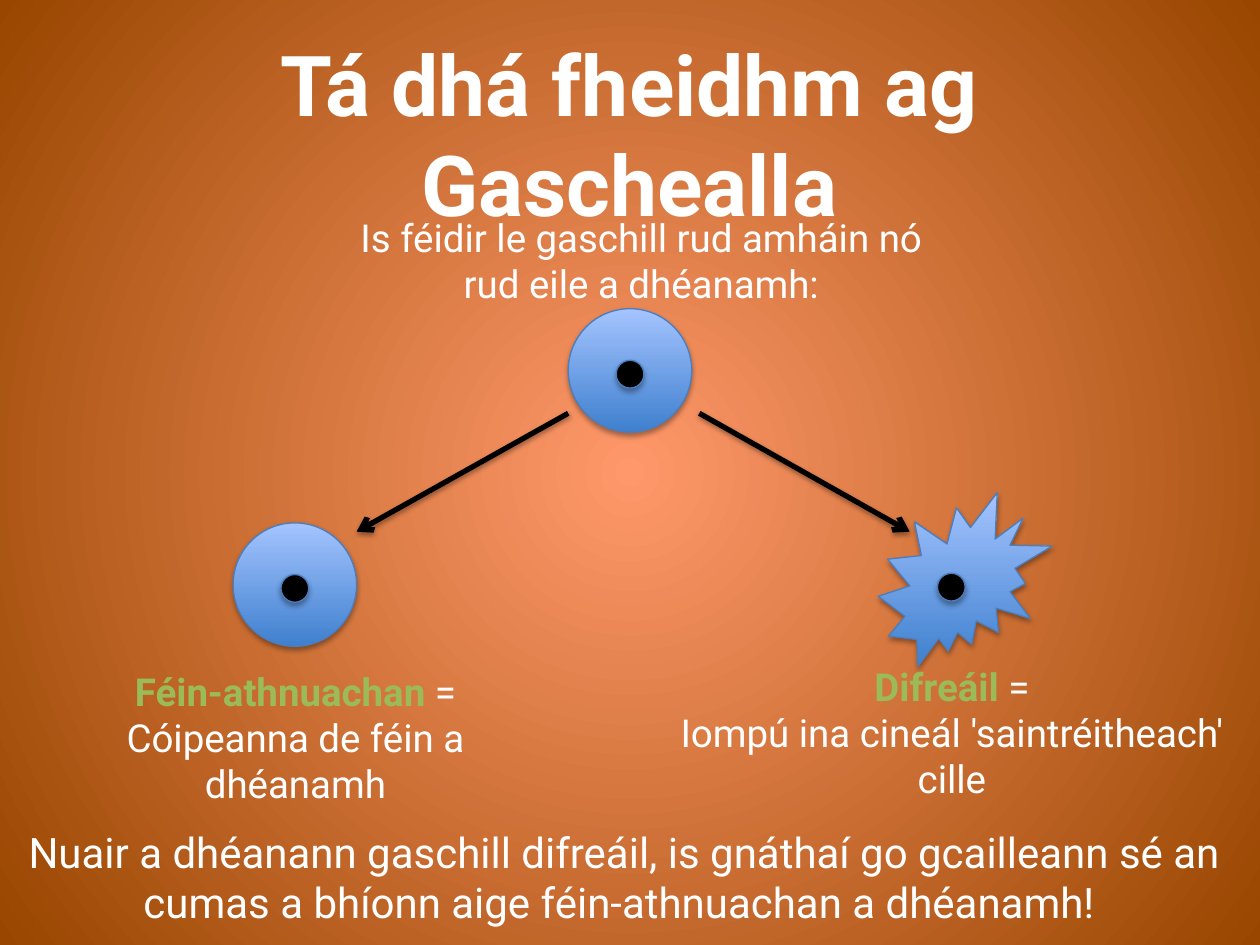
from lxml.etree import SubElement
from pptx import Presentation
from pptx.dml.color import RGBColor
from pptx.enum.shapes import MSO_CONNECTOR, MSO_SHAPE
from pptx.enum.text import MSO_ANCHOR, MSO_AUTO_SIZE, PP_ALIGN
from pptx.oxml import parse_xml
from pptx.oxml.ns import nsdecls, qn
from pptx.util import Inches, Pt

COLS, ROWS = 100, 75
WIDTH, HEIGHT = Inches(10), Inches(7.5)
FONT = "Roboto"
COLORS = {
    "glow": "FF986A", "rust": "984600", "white": "FFFFFF", "black": "000000",
    "term": "9BBB59", "term_line": "4F81BD",
    "cell_dark": "3F80CE", "cell_light": "A4C4FF", "cell_line": "4B7EBC",
}


def rgb(name):
    return RGBColor.from_string(COLORS[name])


def grid(col, row):
    return round(col * WIDTH / COLS), round(row * HEIGHT / ROWS)


def box(col, row, cols, rows):
    return *grid(col, row), *grid(cols, rows)


def set_gradient(fill, *names):
    fill.gradient()
    for stop, name in zip(fill.gradient_stops, names):
        stop.color.rgb = rgb(name)


def set_background(slide):
    set_gradient(slide.background.fill, "glow", "rust")
    grad = slide.element.find(".//" + qn("a:gradFill"))
    grad.remove(grad.find(qn("a:lin")))
    path = SubElement(grad, qn("a:path"), path="circle")
    SubElement(path, qn("a:fillToRect"), l="50000", t="50000", r="50000", b="50000")


def add_shadow(sp, dist, alpha):
    sp_pr = sp._element.spPr
    for old in sp_pr.findall(qn("a:effectLst")):
        sp_pr.remove(old)
    sp_pr.append(parse_xml(
        f'<a:effectLst {nsdecls("a")}><a:outerShdw blurRad="{Pt(3.1)}" '
        f'dist="{Pt(dist)}" dir="5400000" rotWithShape="0">'
        f'<a:srgbClr val="{COLORS["black"]}"><a:alpha val="{alpha * 1000}"/>'
        '</a:srgbClr></a:outerShdw></a:effectLst>'))


def add_run(p, text, size, color="white", bold=False, outline=None):
    r = p.add_run()
    r.text = text
    r.font.name, r.font.size, r.font.bold = FONT, Pt(size), bold
    r.font.color.rgb = rgb(color)
    if outline:
        r.font._element.insert(0, parse_xml(
            f'<a:ln {nsdecls("a")} w="{Pt(0.75)}"><a:solidFill>'
            f'<a:srgbClr val="{COLORS[outline]}"/></a:solidFill></a:ln>'))


def add_title(slide, text, place):
    sp = slide.shapes.title
    sp.left, sp.top, sp.width, sp.height = place
    tf = sp.text_frame
    tf.word_wrap = True
    tf.auto_size = MSO_AUTO_SIZE.NONE
    tf.vertical_anchor = MSO_ANCHOR.MIDDLE
    tf.paragraphs[0].alignment = PP_ALIGN.CENTER
    add_run(tf.paragraphs[0], text, 48, bold=True)


def add_text(slide, text, place, size=22, term=None, sign=None):
    tf = slide.shapes.add_textbox(*place).text_frame
    tf.word_wrap = True
    tf.auto_size = MSO_AUTO_SIZE.SHAPE_TO_FIT_TEXT
    p = tf.paragraphs[0]
    if term:
        add_run(p, term, size, "term", True, "term_line")
        add_run(p, sign, size)
        p = tf.add_paragraph()
    add_run(p, text, size)
    for p in tf.paragraphs:
        p.alignment = PP_ALIGN.CENTER


def add_part(group, kind, place):
    sp = group.shapes.add_shape(kind, *place)
    sp.line.color.rgb = rgb("cell_line")
    sp.line.width = Pt(0.75)
    add_shadow(sp, 1.8, 35)
    return sp


def add_cell(slide, kind, body, nucleus_center):
    group = slide.shapes.add_group_shape()
    sp = add_part(group, kind, box(*body))
    set_gradient(sp.fill, "cell_dark", "cell_light")
    sp.fill.gradient_angle = 90
    size = 2.2
    col, row = (center - size / 2 for center in nucleus_center)
    nucleus = add_part(group, MSO_SHAPE.OVAL, box(col, row, size, size))
    nucleus.fill.solid()
    nucleus.fill.fore_color.rgb = rgb("black")


def add_round_cell(slide, col, row):
    size = 9.8
    add_cell(slide, MSO_SHAPE.OVAL, (col - size / 2, row - size / 2, size, size),
             (col, row + 0.3))


def add_arrow(slide, start, end):
    line = slide.shapes.add_connector(MSO_CONNECTOR.STRAIGHT, *grid(*start), *grid(*end))
    line.line.color.rgb = rgb("black")
    line.line.width = Pt(3)
    SubElement(line.line._get_or_add_ln(), qn("a:tailEnd"), type="arrow")
    add_shadow(line, 1.6, 38)


def main():
    prs = Presentation()
    prs.slide_width, prs.slide_height = WIDTH, HEIGHT
    slide = prs.slides.add_slide(prs.slide_layouts[5])
    set_background(slide)
    add_title(slide, "Tá dhá fheidhm ag Gaschealla", box(4.3, 6.7, 91.3, 7.7))

    add_round_cell(slide, 50, 29.4)
    add_round_cell(slide, 23.4, 46.4)
    add_cell(slide, MSO_SHAPE.EXPLOSION2, (69.7, 39.1, 13.8, 13.8), (75.5, 46.6))

    add_text(slide, "Is féidir le gaschill rud amháin nó rud eile a dhéanamh:",
             box(25.8, 16.5, 50.2, 8.4))
    add_text(slide, "Cóipeanna de féin a dhéanamh", box(6.5, 52.5, 33.9, 8.4),
             term="Féin-athnuachan ", sign="=")
    add_text(slide, "Iompú ina cineál 'saintréitheach' cille", box(52.7, 52.1, 45.7, 12.1),
             term="Difreáil", sign=" =")

    for start, end in ((45.1, 28.3), (55.5, 72.2)):
        add_arrow(slide, (start, 32.8), (end, 42.2))

    add_text(slide, "Nuair a dhéanann gaschill difreáil, is gnáthaí go gcailleann sé an "
             "cumas a bhíonn aige féin-athnuachan a dhéanamh! ",
             box(0.8, 65.1, 97.5, 9.1), size=24)
    prs.save("out.pptx")


if __name__ == "__main__":
    main()
